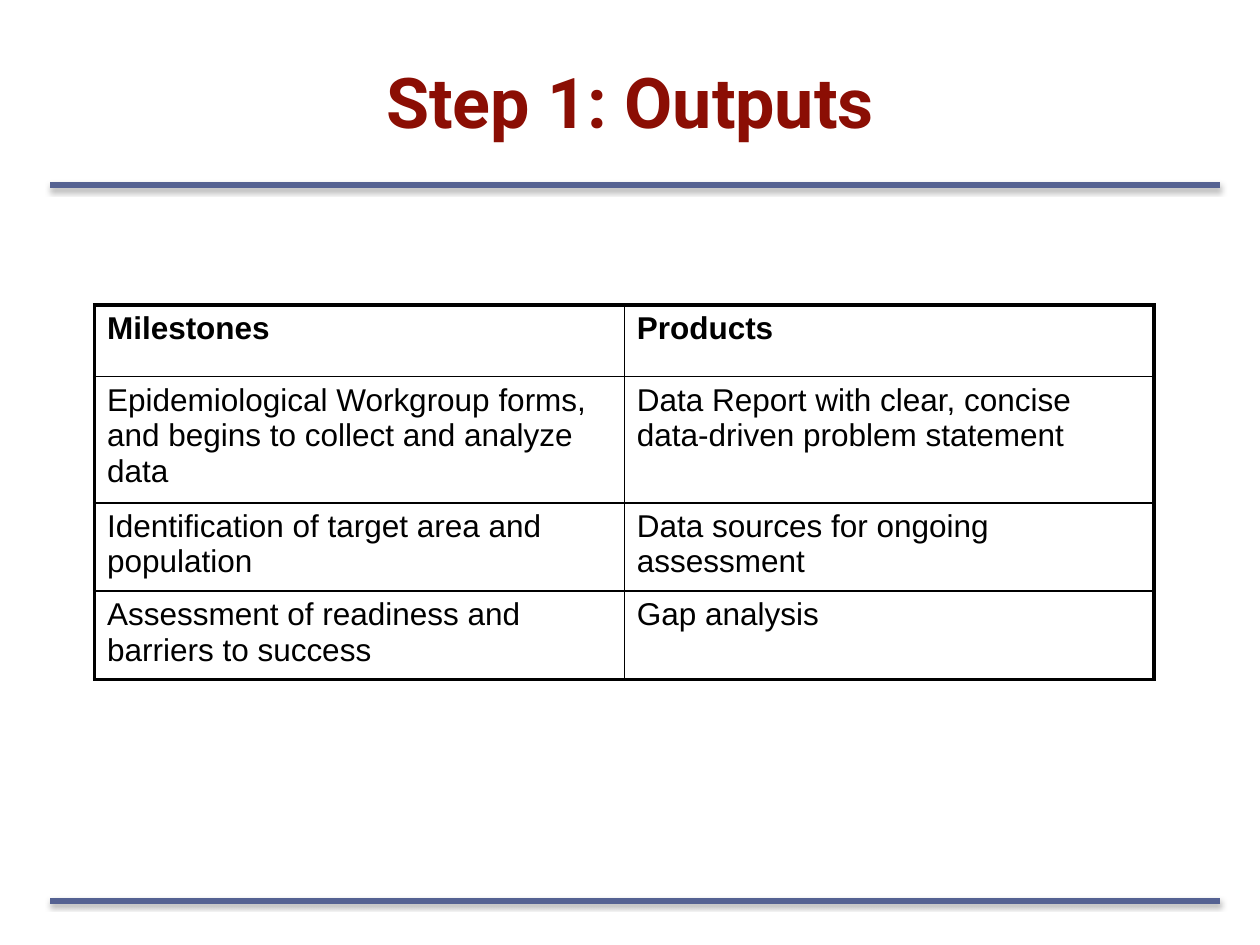
from lxml.etree import SubElement as Sub
from pptx import Presentation
from pptx.dml.color import RGBColor
from pptx.enum.shapes import MSO_CONNECTOR as Link
from pptx.enum.text import MSO_ANCHOR as Anchor, PP_ALIGN as Align
from pptx.oxml.ns import qn
from pptx.util import Inches, Pt

WIDE, HIGH = Inches(10), Inches(7.5)
COL, ROW = WIDE / 100, HIGH / 75
BLACK, RED, BLUE = "000000", "8B0E04", "556292"
THICK, THIN = 2.25, 1
HEAD = {"name": "Roboto", "size": Pt(40), "bold": True}
BODY = {"name": "Arial", "size": Pt(18)}
DATA = [
    ("Milestones", "Products"),
    ("Epidemiological Workgroup forms, and begins to collect and analyze data",
     "Data Report with clear, concise data-driven problem statement"),
    ("Identification of target area and population",
     "Data sources for ongoing assessment"),
    ("Assessment of readiness and barriers to success", "Gap analysis"),
]
TALL = [5.7, 9.4, 6.8, 6.8]


def tint(code):
    return RGBColor.from_string(code)


def grid(x, y, w, h):
    return [round(n) for n in (x * COL, y * ROW, w * COL, h * ROW)]


def style(font, form, color):
    for key, value in form.items():
        setattr(font, key, value)
    font.color.rgb = tint(color)


def rule(slide, box):
    x, y, w, h = box
    line = slide.shapes.add_connector(Link.STRAIGHT, x, y, x + w, y + h)
    line.line.color.rgb = tint(BLUE)
    line.line.width = Pt(3.25)
    glow = Sub(Sub(line._element.spPr, qn("a:effectLst")), qn("a:outerShdw"),
               blurRad=str(Pt(3.1)), dist=str(Pt(1.6)), dir="5400000",
               algn="ctr", rotWithShape="0")
    shade = Sub(glow, qn("a:srgbClr"), val=BLACK)
    Sub(shade, qn("a:alpha"), val="38000")


def title(slide, box, text):
    frame = slide.shapes.add_textbox(*box).text_frame
    frame.word_wrap = True
    frame.vertical_anchor = Anchor.MIDDLE
    para = frame.paragraphs[0]
    para.text = text
    para.alignment = Align.CENTER
    style(para.font, HEAD, RED)


def border(cell, sides):
    props = cell._tc.get_or_add_tcPr()
    for spot, (side, outer) in enumerate(sides.items()):
        width = Pt(THICK if outer else THIN)
        edge = Sub(props, qn(f"a:ln{side}"), w=str(width))
        Sub(Sub(edge, qn("a:solidFill")), qn("a:srgbClr"), val=BLACK)
        props.insert(spot, edge)


def table(slide, box, data):
    rows, cols = len(data), len(data[0])
    sheet = slide.shapes.add_table(rows, cols, *box).table
    sheet.first_row = sheet.horz_banding = False
    for row, tall in zip(sheet.rows, TALL):
        row.height = round(tall * ROW)
    for r, line in enumerate(data):
        for c, text in enumerate(line):
            cell = sheet.cell(r, c)
            cell.text = text
            cell.fill.background()
            form = {**BODY, "bold": r == 0}
            style(cell.text_frame.paragraphs[0].font, form, BLACK)
            border(cell, {"L": c == 0, "R": c == cols - 1,
                          "T": r == 0, "B": r == rows - 1})


def main():
    deck = Presentation()
    deck.slide_width, deck.slide_height = WIDE, HIGH
    slide = deck.slides.add_slide(deck.slide_layouts[6])
    for y in (14.7, 71.5):
        rule(slide, grid(4, y, 92.8, 0))
    title(slide, grid(5, 3, 90, 9.9), "Step 1: Outputs")
    table(slide, grid(7.5, 24.2, 84.1, sum(TALL)), DATA)
    deck.save("out.pptx")


if __name__ == "__main__":
    main()
